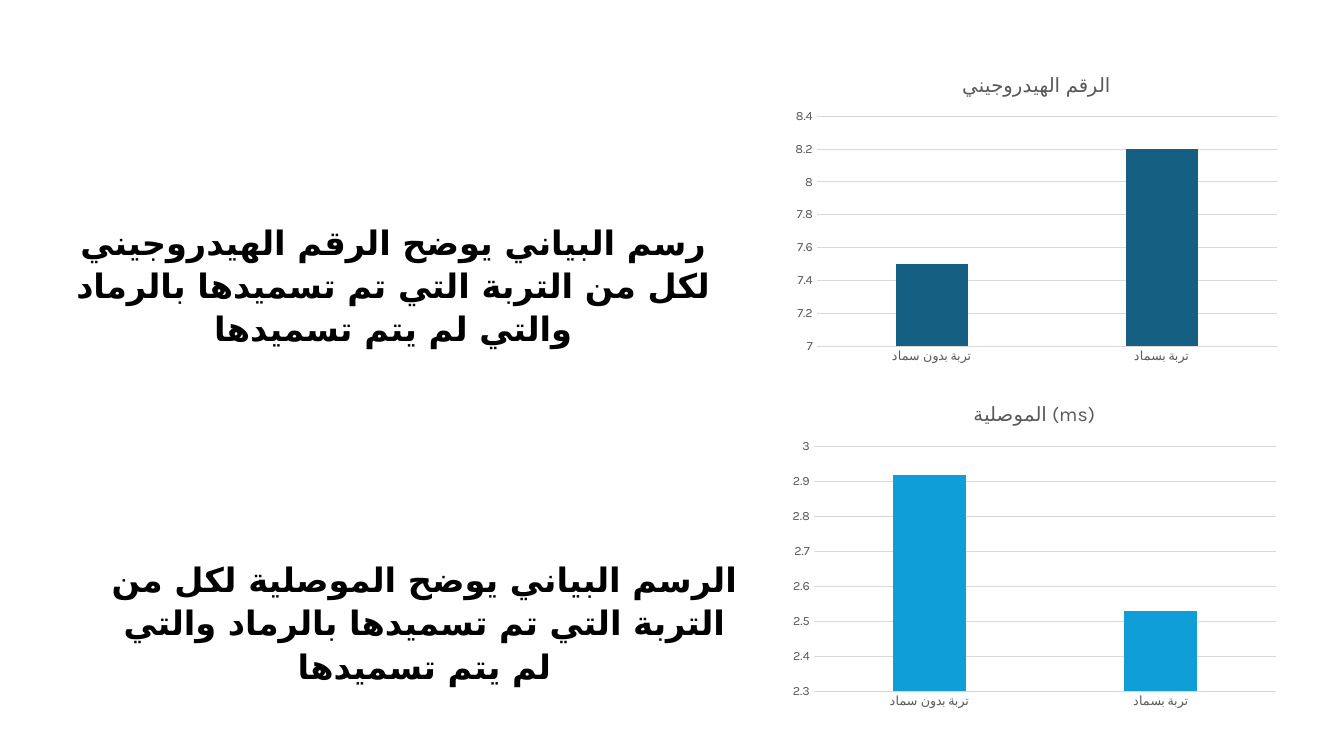
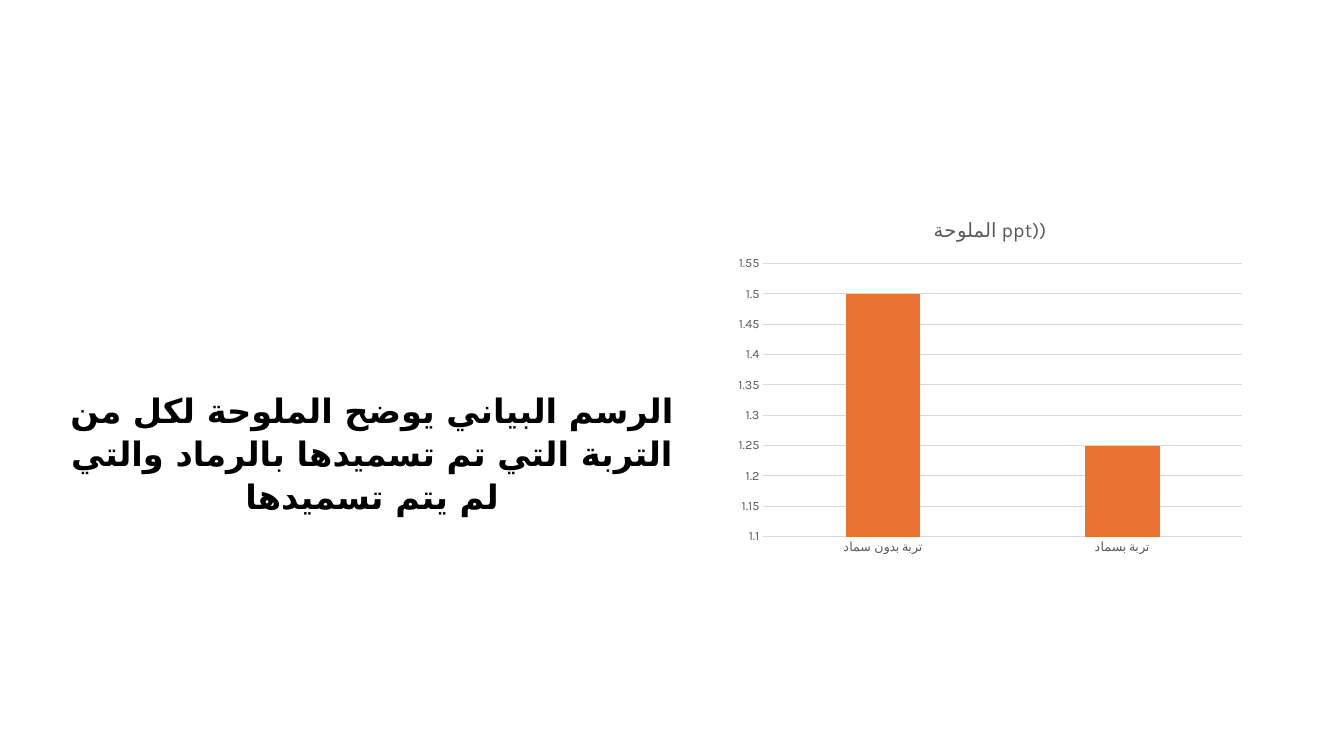
from lxml.etree import SubElement
from pptx import Presentation
from pptx.chart.data import CategoryChartData
from pptx.dml.color import RGBColor
from pptx.enum.chart import XL_CHART_TYPE, XL_TICK_MARK
from pptx.enum.text import MSO_AUTO_SIZE, PP_ALIGN
from pptx.oxml.ns import qn
from pptx.util import Inches, Pt

# Shared style
FONT = "Karla"
ARABIC_FONT = "DejaVu Sans"
BLACK = RGBColor(0x00, 0x00, 0x00)
GREY = RGBColor(0x59, 0x59, 0x59)
RULE = RGBColor(0xD9, 0xD9, 0xD9)
TEAL = RGBColor(0x15, 0x60, 0x82)
BLUE = RGBColor(0x0F, 0x9E, 0xD5)
ORANGE = RGBColor(0xE9, 0x71, 0x32)
SOILS = ("تربة بدون سماد", "تربة بسماد")
CAPTION_SIZE = (6.66, 0.95)


def apply(target, formats):
    for name, value in formats.items():
        setattr(target, name, value)


class SoilDeck:
    """Holds the presentation, the current slide and the shared style."""

    def __init__(self):
        self.deck = Presentation()
        apply(self.deck, {"slide_width": Inches(13.33), "slide_height": Inches(7.5)})
        self.page = None

    def add_page(self):
        self.page = self.deck.slides.add_slide(self.deck.slide_layouts[6])

    def style_font(self, font, size, color, bold=False):
        apply(font, {"name": FONT, "size": Pt(size), "bold": bold})
        font.color.rgb = color

    def style_line(self, line):
        line.color.rgb = RULE
        line.width = Pt(0.75)

    def caption(self, left, top, text):
        lengths = map(Inches, (left, top, *CAPTION_SIZE))
        frame = self.page.shapes.add_textbox(*lengths).text_frame
        apply(frame, {"word_wrap": True, "auto_size": MSO_AUTO_SIZE.SHAPE_TO_FIT_TEXT})
        para = frame.paragraphs[0]
        apply(para, {"alignment": PP_ALIGN.CENTER, "line_spacing": 1.07,
                     "space_after": Pt(8)})
        # Right-to-left reading and the Arabic typeface
        para._p.get_or_add_pPr().set("rtl", "1")
        span = para.add_run()
        span.text = text
        self.style_font(span.font, 24, BLACK, bold=True)
        SubElement(span._r.get_or_add_rPr(), qn("a:cs"), typeface=ARABIC_FONT)

    def column_chart(self, place, title, series_name, values, color, scale):
        data = CategoryChartData()
        data.categories = SOILS
        data.add_series(series_name, values)
        chart = self.page.shapes.add_chart(
            XL_CHART_TYPE.COLUMN_CLUSTERED, *map(Inches, place), data).chart
        self.style_font(chart.font, 10, BLACK)
        chart.has_legend = False

        # Title
        chart.has_title = True
        chart.chart_title.include_in_layout = False
        para = chart.chart_title.text_frame.paragraphs[0]
        span = para.add_run()
        span.text = title
        self.style_font(span.font, 14, GREY)

        # Axes
        for axis in (chart.category_axis, chart.value_axis):
            apply(axis, {"major_tick_mark": XL_TICK_MARK.NONE,
                         "minor_tick_mark": XL_TICK_MARK.NONE})
            self.style_font(axis.tick_labels.font, 9, GREY)
        self.style_line(chart.category_axis.format.line)
        low, high, step = scale
        apply(chart.value_axis, {"minimum_scale": low, "maximum_scale": high,
                                 "major_unit": step, "has_major_gridlines": True})
        chart.value_axis.format.line.fill.background()
        self.style_line(chart.value_axis.major_gridlines.format.line)

        # Columns
        plot = chart.plots[0]
        apply(plot, {"gap_width": 219, "overlap": -27, "vary_by_categories": False})
        series = plot.series[0]
        series.invert_if_negative = False
        series.format.fill.solid()
        series.format.fill.fore_color.rgb = color


def main():
    soil = SoilDeck()

    # Acidity and conductivity
    soil.add_page()
    soil.column_chart((7.79, 0.59, 4.97, 3.07), "الرقم الهيدروجيني",
                      "الرقم الهيدروجيني", (7.5, 8.2), TEAL, (7, 8.4, 0.2))
    soil.caption(0.57, 2.12, "رسم البياني يوضح الرقم الهيدروجيني لكل من التربة "
                 "التي تم تسميدها بالرماد والتي لم يتم تسميدها")
    soil.column_chart((7.76, 3.83, 5, 3.26), "الموصلية (ms)",
                      "Series 1", (2.92, 2.53), BLUE, (2.3, 3, 0.1))
    soil.caption(0.88, 5.47, "الرسم البياني يوضح الموصلية لكل من التربة "
                 "التي تم تسميدها بالرماد والتي لم يتم تسميدها")

    # Salinity
    soil.add_page()
    soil.column_chart((7.22, 2, 5.2, 3.56), "الملوحة ppt))",
                      "Series 1", (1.5, 1.25), ORANGE, (1.1, 1.55, 0.05))
    soil.caption(0.36, 3.79, "الرسم البياني يوضح الملوحة لكل من التربة "
                 "التي تم تسميدها بالرماد والتي لم يتم تسميدها")

    soil.deck.save("out.pptx")


if __name__ == "__main__":
    main()
